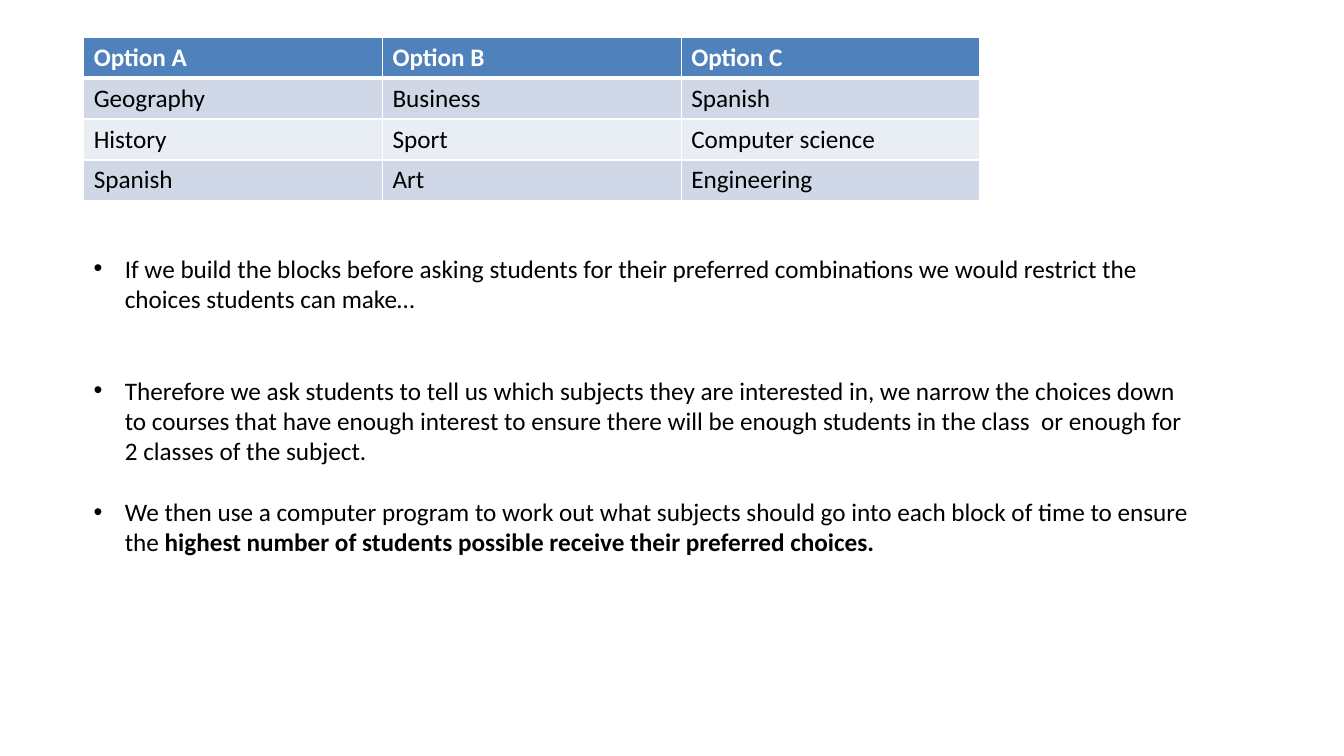
import pptx
import pptx.dml.color
import pptx.oxml
import pptx.oxml.ns
import pptx.util
from pptx.util import Inches

COLOURS = {
    "header": "4F81BD",
    "band_dark": "D0D8E8",
    "band_light": "E9EDF4",
    "white": "FFFFFF",
    "black": "000000",
}
FONT = "Calibri"
TEXT_SIZE = 18
LINE_HEIGHT = 22

OPTIONS = [
    ["Option A", "Option B", "Option C"],
    ["Geography", "Business", "Spanish"],
    ["History", "Sport", "Computer science"],
    ["Spanish", "Art", "Engineering"],
]

# Each point: lines of space above it, then its (text, bold) pieces
POINTS = [
    (0, [("If we build the blocks before asking students for their preferred "
          "combinations we would restrict the choices students can make…", False)]),
    (2, [("Therefore we ask students to tell us which subjects they are interested in, "
          "we narrow the choices down to courses that have enough interest to ensure "
          "there will be enough students in the class  or enough for 2 classes of the "
          "subject.", False)]),
    (1, [("We then use a computer program to work out what subjects should go into "
          "each block of time to ensure the ", False),
         ("highest number of students possible receive their preferred choices.", True)]),
]


def rgb(name):
    return pptx.dml.color.RGBColor.from_string(COLOURS[name])


def style_run(run, colour, bold):
    run.font.name = FONT
    run.font.size = pptx.util.Pt(TEXT_SIZE)
    run.font.bold = bold
    run.font.color.rgb = rgb(colour)


def set_borders(cell, widths):
    """Draw white borders; widths maps L, R, T, B, in that order, to points."""
    properties = cell._tc.get_or_add_tcPr()
    for position, (side, width) in enumerate(widths.items()):
        border = pptx.oxml.parse_xml(
            f'<a:ln{side} {pptx.oxml.ns.nsdecls("a")} w="{pptx.util.Pt(width)}">'
            f'<a:solidFill><a:srgbClr val="{COLOURS["white"]}"/></a:solidFill>'
            f'</a:ln{side}>')
        properties.insert(position, border)


def add_options_table(slide):
    row_count, column_count = len(OPTIONS), len(OPTIONS[0])
    table = slide.shapes.add_table(
        row_count, column_count,
        Inches(0.83), Inches(0.37), Inches(8.89), Inches(1.62)).table
    for row, subjects in enumerate(OPTIONS):
        is_header = row == 0
        fill = "header" if is_header else "band_dark" if row % 2 else "band_light"
        for column, subject in enumerate(subjects):
            cell = table.cell(row, column)
            cell.text_frame.text = subject
            style_run(cell.text_frame.paragraphs[0].runs[0],
                      "white" if is_header else "black", is_header)
            cell.fill.solid()
            cell.fill.fore_color.rgb = rgb(fill)
            set_borders(cell, {"L": 1, "R": 1, "T": 3 if row == 1 else 1,
                               "B": 3 if is_header else 1})


def add_bullet(paragraph):
    properties = paragraph._p.get_or_add_pPr()
    indent = Inches(0.31)
    properties.set("marL", str(indent))
    properties.set("indent", str(-indent))
    namespace = pptx.oxml.ns.nsdecls("a")
    properties.append(pptx.oxml.parse_xml(f'<a:buFont {namespace} typeface="Arial"/>'))
    properties.append(pptx.oxml.parse_xml(f'<a:buChar {namespace} char="•"/>'))


def add_points(slide):
    frame = slide.shapes.add_textbox(
        Inches(0.83), Inches(2.46), Inches(11.17), Inches(3.13)).text_frame
    frame.word_wrap = True
    for number, (lines_above, pieces) in enumerate(POINTS):
        paragraph = frame.add_paragraph() if number else frame.paragraphs[0]
        add_bullet(paragraph)
        if lines_above:
            paragraph.space_before = pptx.util.Pt(lines_above * LINE_HEIGHT)
        for text, bold in pieces:
            run = paragraph.add_run()
            run.text = text
            style_run(run, "black", bold)


def main():
    presentation = pptx.Presentation()
    presentation.slide_width = Inches(13.33)
    presentation.slide_height = Inches(7.5)
    slide = presentation.slides.add_slide(presentation.slide_layouts[6])
    add_options_table(slide)
    add_points(slide)
    presentation.save("out.pptx")


if __name__ == "__main__":
    main()
